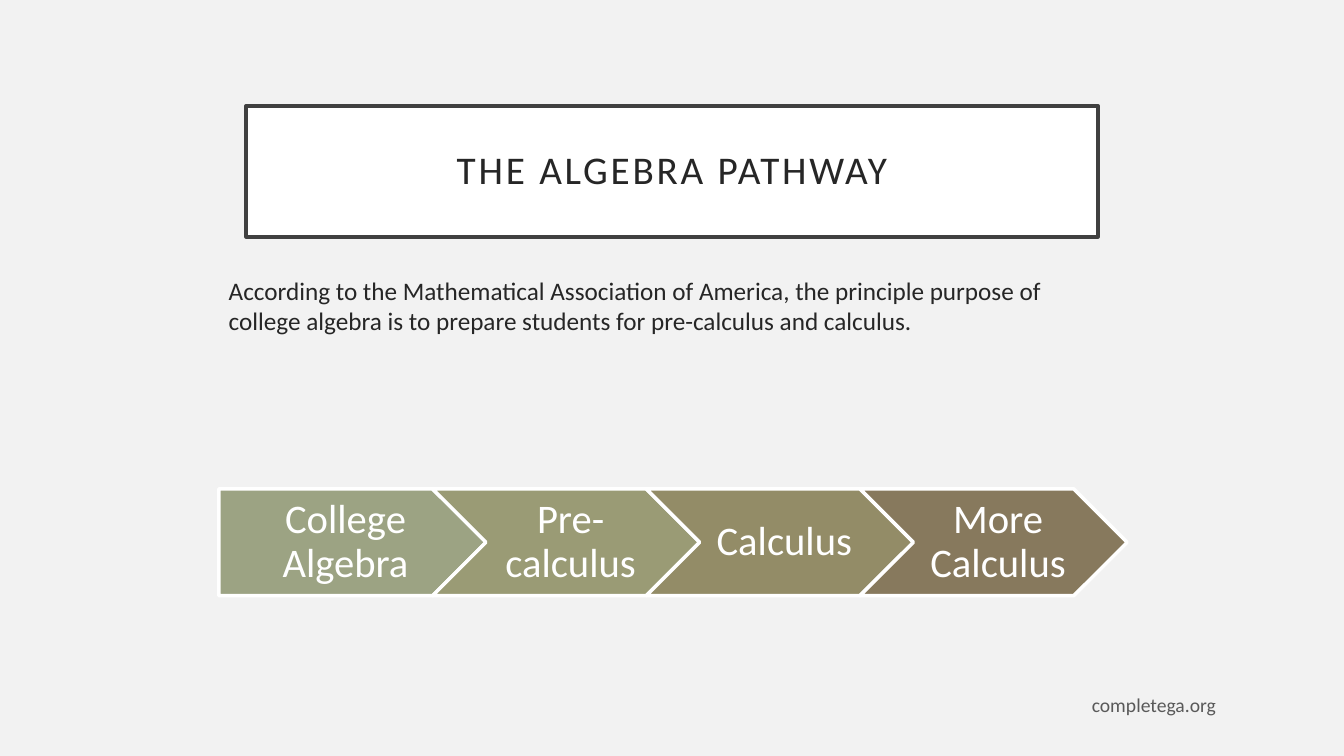
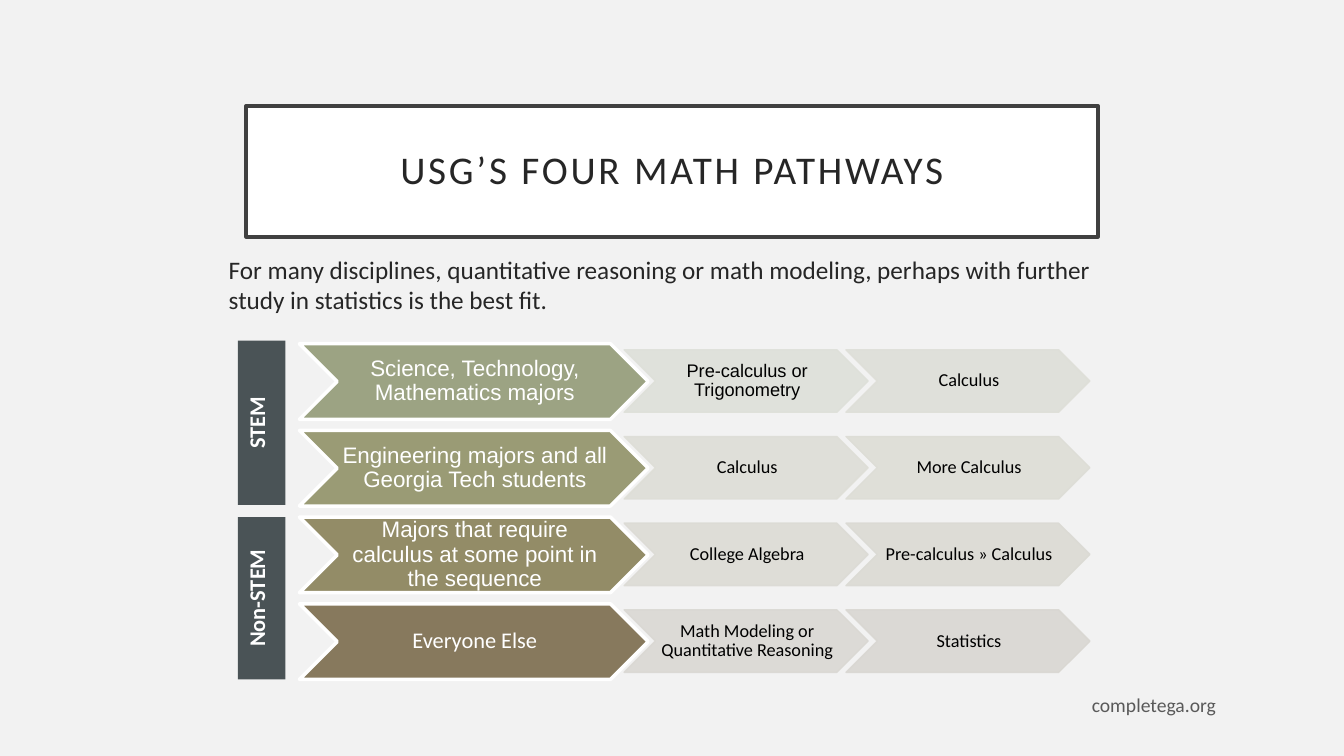
from pptx import Presentation
from pptx.dml.color import RGBColor as RGB
from pptx.enum.shapes import MSO_SHAPE as SHAPE
from pptx.enum.text import MSO_ANCHOR as ANCHOR, PP_ALIGN as ALIGN
from pptx.oxml.xmlchemy import OxmlElement as Elem
from pptx.util import Emu, Pt

PX = 9144
PAPER = RGB(0xF2, 0xF2, 0xF2)
WHITE = RGB(0xFF, 0xFF, 0xFF)
BLACK = RGB(0, 0, 0)
INK = RGB(0x26, 0x26, 0x26)
FRAME = RGB(0x40, 0x40, 0x40)
GREY = RGB(0x59, 0x59, 0x59)
SLATE = RGB(0x4A, 0x53, 0x56)
HUES = [RGB(0x9C, 0xA3, 0x83), RGB(0x9A, 0x9B, 0x75),
        RGB(0x93, 0x8C, 0x67), RGB(0x87, 0x79, 0x5D)]
TINTS = [(RGB(0xDE, 0xE0, 0xD9), RGB(0xDE, 0xDF, 0xD8)),
         (RGB(0xDE, 0xDE, 0xD7), RGB(0xDD, 0xDD, 0xD6)),
         (RGB(0xDC, 0xDB, 0xD5), RGB(0xDB, 0xDA, 0xD4)),
         (RGB(0xDA, 0xD8, 0xD3), RGB(0xD9, 0xD7, 0xD2))]
SANS, ARIAL = "Calibri", "Arial"
TIGHT = (2, 1, 0, 1)

STEPS = ["College Algebra", "Pre-calculus", "Calculus", "More Calculus"]
PATHS = [
    (("Science, Technology, Mathematics majors", ARIAL),
     ("Pre-calculus or Trigonometry", ARIAL), ("Calculus", SANS)),
    (("Engineering majors and all Georgia Tech students", ARIAL),
     ("Calculus", SANS), ("More Calculus", SANS)),
    (("Majors that require calculus at some point in the sequence", ARIAL),
     ("College Algebra", SANS), ("Pre-calculus » Calculus", SANS)),
    (("Everyone Else", SANS),
     ("Math Modeling or Quantitative Reasoning", SANS), ("Statistics", SANS)),
]


def px(*vals):
    """Turn px lengths into EMU."""
    return [Emu(v * PX) for v in vals]


def write(shape, text, size=18, color=INK, font=SANS, bold=False, align=ALIGN.LEFT,
          anchor=ANCHOR.TOP, inset=(10, 5, 10, 5), lead=1.0, track=0, vert=None):
    """Put one formatted paragraph into a shape."""
    frame = shape.text_frame
    frame.word_wrap = True
    frame.vertical_anchor = anchor
    (frame.margin_left, frame.margin_top,
     frame.margin_right, frame.margin_bottom) = px(*inset)
    if vert:
        frame._txBody.bodyPr.set("vert", vert)
    para = frame.paragraphs[0]
    para.alignment = align
    para.line_spacing = lead
    run = para.add_run()
    run.text = text
    face = run.font
    face.name, face.size, face.bold = font, Pt(size), bold
    face.color.rgb = color
    if track:
        run._r.get_or_add_rPr().set("spc", str(track * 100))


def fade(shape, share):
    """Make the fill and line of a shape partly clear."""
    for tint in shape._element.spPr.xpath(".//a:srgbClr"):
        alpha = Elem("a:alpha")
        alpha.set("val", str(share * 1000))
        tint.append(alpha)


def block(slide, kind, box, fill, line=None, width=2.5):
    """Add a flat preset shape."""
    shape = slide.shapes.add_shape(kind, *px(*box))
    shape.shadow.inherit = False
    shape.fill.solid()
    shape.fill.fore_color.rgb = fill
    if line is None:
        shape.line.fill.background()
    else:
        shape.line.color.rgb = line
        shape.line.width = Pt(width)
    return shape


def label(slide, box, text, **style):
    """Add a text box."""
    write(slide.shapes.add_textbox(*px(*box)), text, **style)


def arrow(slide, kind, box, fill, text, line=WHITE, width=2.5, clear=None, **style):
    """Add an arrow block with centred text."""
    shape = block(slide, kind, box, fill, line, width)
    if clear:
        fade(shape, clear)
    write(shape, text, align=ALIGN.CENTER, anchor=ANCHOR.MIDDLE, lead=0.9, **style)


def page(deck, title, body, box):
    """Add a slide with footer, framed title and body text."""
    slide = deck.slides.add_slide(deck.slide_layouts[6])
    label(slide, (925, 683, 291, 34), "completega.org",
          size=14, color=GREY, align=ALIGN.RIGHT)
    head = block(slide, SHAPE.RECTANGLE, (244, 105, 845, 130), WHITE, FRAME)
    write(head, title, size=28, align=ALIGN.CENTER, anchor=ANCHOR.MIDDLE,
          inset=(20,) * 4, lead=0.9, track=2)
    label(slide, box, body)
    return slide


def chain(slide):
    """Draw the algebra steps."""
    for i, (text, hue) in enumerate(zip(STEPS, HUES)):
        kind = SHAPE.CHEVRON if i else SHAPE.PENTAGON
        arrow(slide, kind, (217 + 212 * i, 485, 265, 106), hue, text, size=29,
              color=WHITE, inset=(13 if i else 17, 8, 4, 8))


def grid(slide):
    """Draw one row of chevrons for each pathway."""
    for i, ((lead, *rest), hue, tints) in enumerate(zip(PATHS, HUES, TINTS)):
        top = 341 + 86 * i
        text, font = lead
        arrow(slide, SHAPE.CHEVRON, (297, top, 346, 75), hue, text,
              size=16, color=WHITE, font=font, inset=TIGHT)
        for j, ((text, font), tint) in enumerate(zip(rest, tints)):
            arrow(slide, SHAPE.CHEVRON, (619 + 220 * j, top + 6, 242, 62), tint, text,
                  line=tint, width=1, clear=90, size=13, color=BLACK,
                  font=font, inset=TIGHT)


def tabs(slide):
    """Draw the upright group names."""
    for text, top, high in (("STEM", 338, 163), ("Non-STEM", 513, 161)):
        tab = block(slide, SHAPE.RECTANGLE, (236, top, 47, high), SLATE)
        write(tab, text, size=16, color=WHITE, bold=True,
              align=ALIGN.CENTER, vert="vert270")


def main():
    """Build and save the deck."""
    deck = Presentation()
    deck.slide_width, deck.slide_height = px(1333, 750)
    back = deck.slide_master.background.fill
    back.solid()
    back.fore_color.rgb = PAPER
    chain(page(deck, "THE ALGEBRA PATHWAY",
               "According to the Mathematical Association of America, the principle "
               "purpose of college algebra is to prepare students for pre-calculus "
               "and calculus.", (217, 268, 900, 177)))
    slide = page(deck, "USG’S FOUR MATH PATHWAYS",
                 "For many disciplines, quantitative reasoning or math modeling, "
                 "perhaps with further study in statistics is the best fit.",
                 (217, 247, 900, 91))
    grid(slide)
    tabs(slide)
    deck.save("out.pptx")


if __name__ == "__main__":
    main()
